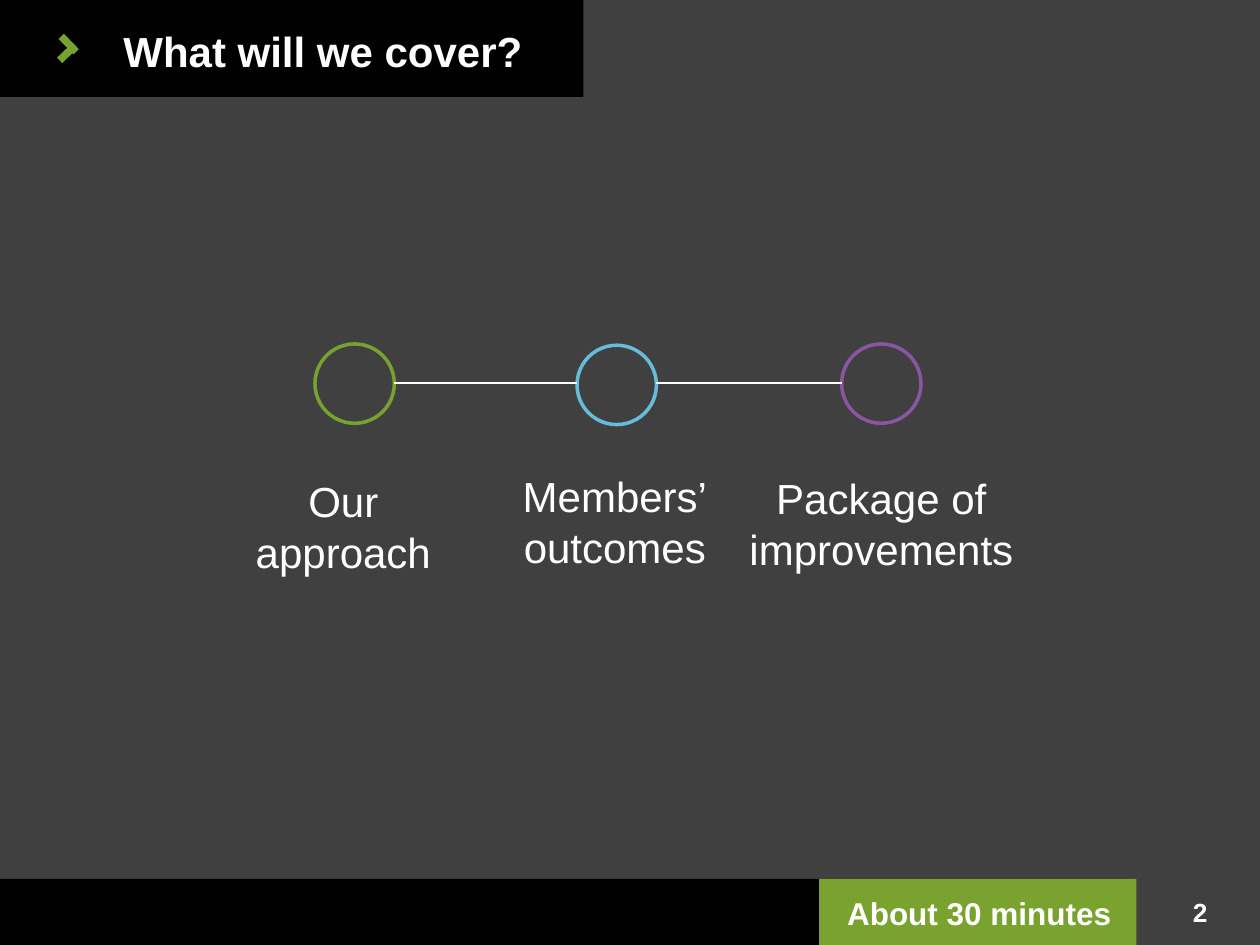
from lxml.etree import SubElement
from pptx import Presentation
from pptx.dml.color import RGBColor
from pptx.enum.shapes import MSO_CONNECTOR, MSO_SHAPE
from pptx.enum.text import MSO_ANCHOR, PP_ALIGN
from pptx.oxml.ns import qn
from pptx.util import Inches, Pt

WHITE, BLACK, GREEN = "FFFFFF", "000000", "78A22F"
BLUE, PURPLE = "66BCDB", "8956A3"

deck = Presentation()
deck.slide_width, deck.slide_height = Inches(10), Inches(7.5)
wide, high = 10, 7.5
slide = deck.slides.add_slide(deck.slide_layouts[6])
slide.background.fill.solid()
slide.background.fill.fore_color.rgb = RGBColor.from_string("404040")


def draw(kind, box, fill=None, line=None):
    item = slide.shapes.add_shape(kind, *[Inches(v) for v in box])
    item.shadow.inherit = False
    if fill:
        item.fill.solid()
        item.fill.fore_color.rgb = RGBColor.from_string(fill)
    else:
        item.fill.background()
    if line:
        item.line.color.rgb = RGBColor.from_string(line)
        item.line.width = Pt(2)
    else:
        item.line.fill.background()
    return item


def write(item, text, size, pads, align=PP_ALIGN.CENTER, bold=False,
          pitch=None, wrap=False, anchor=MSO_ANCHOR.TOP):
    frame = item.text_frame
    frame.word_wrap = wrap
    frame.vertical_anchor = anchor
    frame.margin_left, frame.margin_top, frame.margin_right, frame.margin_bottom = [
        Inches(v) for v in pads]
    frame.text = text
    for para in frame.paragraphs:
        para.alignment = align
        if pitch:
            para.line_spacing = Pt(pitch)
        para.font.name, para.font.size, para.font.bold = "Arial", Pt(size), bold
        para.font.color.rgb = RGBColor.from_string(WHITE)


# Footer bar, time and page number
foot = 0.93 * high
draw(MSO_SHAPE.RECTANGLE, (0, foot, 0.9 * wide, high - foot), BLACK)
time = draw(MSO_SHAPE.RECTANGLE, (0.65 * wide, foot, 2.52, 0.54), "7AA22F")
write(time, "About 30 minutes", 18, (0.2, 0.12, 0.2, 0.12), PP_ALIGN.RIGHT, True)
page = slide.shapes.add_textbox(Inches(9.09), Inches(7.04), Inches(0.87), Inches(0.4))
write(page, "2", 15, (0.1, 0, 0.1, 0), bold=True, wrap=True, anchor=MSO_ANCHOR.MIDDLE)

# Title band with its chevron
band = draw(MSO_SHAPE.RECTANGLE, (0, 0, 4.63, 0.77), BLACK)
write(band, "What will we cover?", 24, (0.98, 0.16, 0.39, 0.16), PP_ALIGN.LEFT, True, 32)
for left, top, turn in [(0.45, 0.39, 316), (0.46, 0.32, 46)]:
    arm = draw(MSO_SHAPE.RECTANGLE, (left, top, 0.17, 0.06), GREEN)
    arm.rotation = turn

# Topics: ring colour, ring place, label, label box, wrapping
ring = 0.63
topics = [
    (GREEN, 2.5, 2.73, "Our approach", (1.61, 3.65, 2.23), True),
    (BLUE, 4.58, 2.74, "Members’\noutcomes", (3.98, 3.61, 1.8), False),
    (PURPLE, 6.68, 2.73, "Package of\vimprovements", (5.78, 3.63, 2.43), False),
]
for hue, left, top, text, place, wrap in topics:
    draw(MSO_SHAPE.OVAL, (left, top, ring, ring), line=hue)
    label = slide.shapes.add_textbox(*[Inches(v) for v in (*place, 1.05)])
    write(label, text, 24, (0.16, 0.12, 0.16, 0.12), pitch=29, wrap=wrap)

# Links between neighbouring rings
for (_, left, *_), (_, right, *_) in zip(topics, topics[1:]):
    link = slide.shapes.add_connector(
        MSO_CONNECTOR.STRAIGHT, Inches(left + ring), Inches(3.04),
        Inches(right), Inches(3.04))
    link.line.color.rgb = RGBColor.from_string(WHITE)
    link.line.width = Pt(0.75)
    SubElement(link._element.spPr, qn("a:effectLst"))

deck.save("out.pptx")
